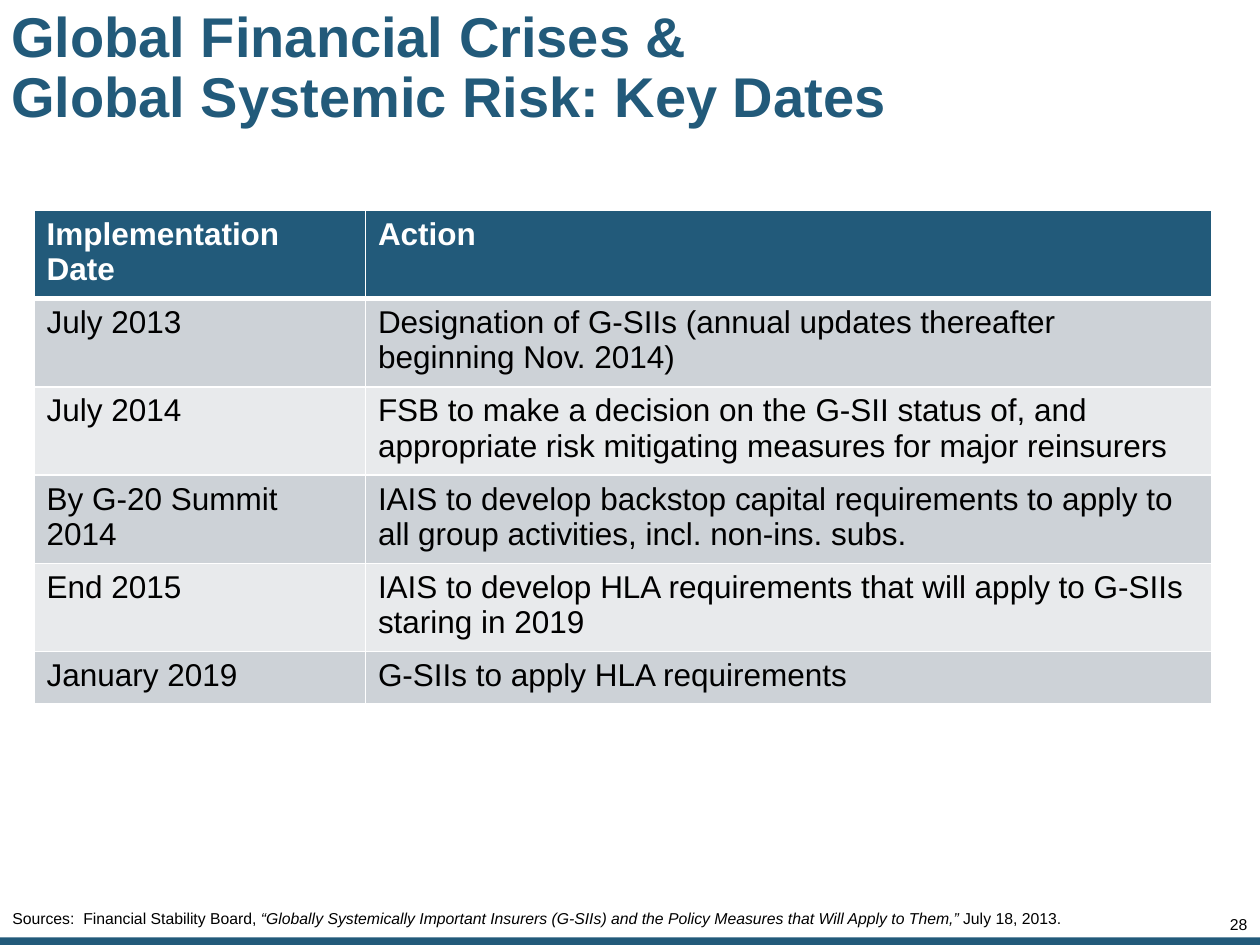
from lxml import etree
from pptx import Presentation
from pptx.dml.color import RGBColor
from pptx.enum.shapes import MSO_SHAPE
from pptx.enum.text import MSO_ANCHOR, PP_ALIGN
from pptx.oxml.ns import qn
from pptx.util import Inches, Pt

RECTANGLE = MSO_SHAPE.RECTANGLE
TOP, MIDDLE = MSO_ANCHOR.TOP, MSO_ANCHOR.MIDDLE
LEFT, RIGHT = PP_ALIGN.LEFT, PP_ALIGN.RIGHT

FONT = "Arial"
BLUE, BLACK, WHITE = "225A7A", "000000", "FFFFFF"
BANDS = ["CDD2D7", "E8EAEC"]
TITLE_LINES = [("Global Financial Crises & ", False), ("Global Systemic Risk: Key Dates", False)]
PAGE_NUMBER = "28"
SOURCES = [
    ("Sources:  Financial Stability Board, ", False),
    ("“Globally Systemically Important Insurers (G-SIIs) and the Policy "
     "Measures that Will Apply to Them,”", True),
    (" July 18, 2013.", False),
]
KEY_DATES = [
    ("Implementation Date", "Action"),
    ("July 2013", "Designation of G-SIIs (annual updates thereafter beginning Nov. 2014)"),
    ("July 2014", "FSB to make a decision on the G-SII status of, and appropriate "
                  "risk mitigating measures for major reinsurers"),
    ("By G-20 Summit 2014", "IAIS to develop backstop capital requirements to apply to "
                            "all group activities, incl. non-ins. subs."),
    ("End 2015", "IAIS to develop HLA requirements that will apply to G-SIIs "
                 "staring in 2019"),
    ("January 2019", "G-SIIs to apply HLA requirements"),
]
COLUMN_WIDTHS = [2.63, 6.72]
ROW_HEIGHT = 0.41


def rgb(color):
    """Turn a hex string into a colour."""
    return RGBColor.from_string(color)


def style(paragraph, size, color, bold=False):
    """Set the font of a whole paragraph."""
    font = paragraph.font
    font.name, font.size, font.bold = FONT, Pt(size), bold
    font.color.rgb = rgb(color)


def add_text(page, place, spans, size, color, bold=False, align=LEFT,
             spacing=1.0, anchor=TOP, insets=(0.1, 0.05), break_lines=False):
    """Add a one-paragraph text box made of (text, italic) spans."""
    box = page.shapes.add_textbox(*map(Inches, place))
    frame = box.text_frame
    frame.word_wrap = True
    frame.vertical_anchor = anchor
    frame.margin_left = frame.margin_right = Inches(insets[0])
    frame.margin_top = frame.margin_bottom = Inches(insets[1])
    paragraph = frame.paragraphs[0]
    paragraph.alignment, paragraph.line_spacing = align, spacing
    style(paragraph, size, color, bold)
    for position, (text, italic) in enumerate(spans):
        if break_lines and position:
            paragraph.add_line_break()
        span = paragraph.add_run()
        span.text = text
        if italic:
            span.font.italic = True


def set_border(cell, side, points):
    """Draw one white border of a table cell."""
    line = etree.SubElement(cell._tc.get_or_add_tcPr(), qn(f"a:ln{side}"), w=str(Pt(points)))
    fill = etree.SubElement(line, qn("a:solidFill"))
    etree.SubElement(fill, qn("a:srgbClr"), val=WHITE)


def add_key_dates(page):
    """Add the banded table of dates and actions."""
    table = page.shapes.add_table(
        len(KEY_DATES), len(COLUMN_WIDTHS), Inches(0.27), Inches(1.67),
        Inches(sum(COLUMN_WIDTHS)), Inches(ROW_HEIGHT * len(KEY_DATES))).table
    for column, width in zip(table.columns, COLUMN_WIDTHS):
        column.width = Inches(width)
    for r, texts in enumerate(KEY_DATES):
        header = r == 0
        table.rows[r].height = Inches(ROW_HEIGHT)
        widths = {"L": 1, "R": 1, "T": 3 if r == 1 else 1, "B": 3 if header else 1}
        for c, text in enumerate(texts):
            cell = table.cell(r, c)
            cell.text = text
            style(cell.text_frame.paragraphs[0], 18, WHITE if header else BLACK, header)
            for side, points in widths.items():
                set_border(cell, side, points)
            cell.fill.solid()
            cell.fill.fore_color.rgb = rgb(BLUE if header else BANDS[(r - 1) % 2])


def main():
    """Build the slide and save it."""
    deck = Presentation()
    deck.slide_width, deck.slide_height = Inches(10), Inches(7.5)
    page = deck.slides.add_slide(deck.slide_layouts[6])
    footer = page.shapes.add_shape(RECTANGLE, 0, Inches(7.44), Inches(10), Inches(0.06))
    footer.shadow.inherit = False
    footer.fill.solid()
    footer.fill.fore_color.rgb = rgb(BLUE)
    footer.line.fill.background()
    add_text(page, (9.41, 7.28, 0.49, 0.13), [(PAGE_NUMBER, False)], 9, BLACK,
             align=RIGHT, spacing=0.85, insets=(0, 0))
    add_text(page, (0.04, 0.08, 9.12, 0.94), TITLE_LINES, 32, BLUE, bold=True,
             spacing=0.9, anchor=MIDDLE, insets=(0.05, 0.05), break_lines=True)
    add_key_dates(page)
    add_text(page, (0, 7.16, 9.57, 0.25), SOURCES, 9, BLACK)
    deck.save("out.pptx")


if __name__ == "__main__":
    main()
